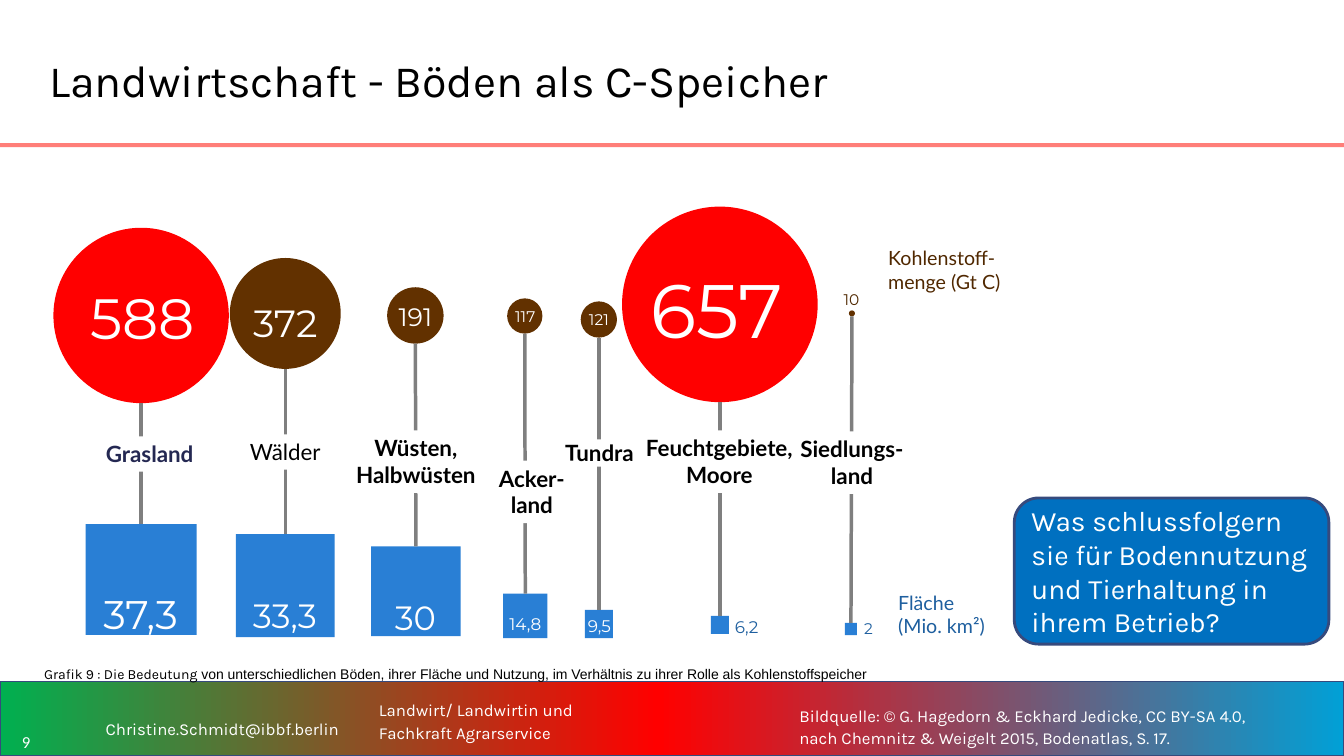
from copy import deepcopy
from dataclasses import dataclass
from typing import NamedTuple

from pptx import Presentation
from pptx.dml.color import RGBColor
from pptx.enum.shapes import MSO_CONNECTOR, MSO_SHAPE as Preset
from pptx.enum.text import MSO_ANCHOR as Anchor, PP_ALIGN as Align
from pptx.oxml.ns import qn
from pptx.oxml.xmlchemy import OxmlElement
from pptx.util import Emu, Pt

EMU_PER_PX = 9144
COLORS = {
    "white": "FFFFFF", "black": "000000", "red": "FF0000", "brown": "623100",
    "dark brown": "502800", "blue": "297FD5", "dark blue": "1E5F9F",
    "navy": "242852", "gray": "7F7F7F", "rose": "FF7E79", "outline": "364A7D",
    "callout": "0070C0", "green": "00B050", "cyan": "01A0D6",
}
FOOTER_STOPS = [(0, "green"), (0.49, "red"), (1, "cyan")]
PLAIN = (10, 5, 10, 5)
VALUE = (10, 5, 10, 0)


class Box(NamedTuple):
    left: int
    top: int
    width: int
    height: int


class Value(NamedTuple):
    text: str
    box: Box
    size: float
    color: str = "white"


@dataclass
class Soil:
    lines: list[str]
    label: Box
    circle: Box
    square: Box
    carbon: Value
    area: Value
    circle_color: str = "brown"
    label_color: str = "black"
    bold: bool = True
    insets: tuple = (0, 4, 0, 4)


SOILS = [
    Soil(["Grasland"], Box(86, 433, 125, 35), Box(53, 226, 174, 174), Box(85, 520, 110, 110),
         Value("588", Box(78, 276, 127, 78), 40.5), Value("37,3", Box(89, 580, 101, 53), 28.5),
         circle_color="red", label_color="navy"),
    Soil(["Wälder"], Box(236, 431, 94, 35), Box(228, 256, 110, 110), Box(234, 530, 98, 102),
         Value("372", Box(239, 292, 88, 56), 27), Value("33,3", Box(238, 585, 89, 45), 24),
         bold=False),
    Soil(["Wüsten,", "Halbwüsten"], Box(350, 427, 125, 62), Box(384, 285, 56, 56),
         Box(368, 542, 89, 89),
         Value("191", Box(384, 294, 56, 40), 18), Value("30", Box(380, 587, 64, 45), 24)),
    Soil(["Tundra"], Box(559, 436, 71, 27), Box(576, 299, 36, 36), Box(580, 605, 28, 28),
         Value("121", Box(573, 303, 42, 29), 11), Value("9,5", Box(572, 606, 45, 25), 12),
         insets=(0, 0, 0, 0)),
    Soil(["Acker-land"], Box(484, 457, 87, 62), Box(503, 296, 35, 35), Box(499, 589, 44, 44),
         Value("117", Box(500, 300, 42, 29), 11), Value("14,8", Box(495, 604, 52, 25), 12)),
    Soil(["Feuchtgebiete,", "Moore"], Box(637, 427, 153, 62), Box(617, 205, 194, 194),
         Box(705, 611, 18, 18),
         Value("657", Box(631, 256, 160, 101), 54),
         Value("6,2", Box(718, 607, 45, 25), 12, "dark blue"), circle_color="red"),
    Soil(["Siedlungs-", "land"], Box(789, 428, 112, 62), Box(842, 308, 6, 6),
         Box(838, 618, 12, 12),
         Value("10", Box(826, 283, 37, 29), 11, "dark brown"),
         Value("2", Box(847, 609, 29, 24), 11, "dark blue"), insets=(4, 4, 4, 4)),
]


def px(count: int) -> Emu:
    return Emu(count * EMU_PER_PX)


def rgb(name: str) -> RGBColor:
    return RGBColor.from_string(COLORS[name])


def add_form(page, preset, box: Box, fill: str, line: str | None = None, weight: float = 1):
    shape = page.shapes.add_shape(preset, *map(px, box))
    shape.shadow.inherit = False
    shape.fill.solid()
    shape.fill.fore_color.rgb = rgb(fill)
    if line:
        shape.line.color.rgb = rgb(line)
        shape.line.width = Pt(weight)
    else:
        shape.line.fill.background()
    return shape


def add_span(para, text: str, font: str, size: float, color: str, bold: bool = False) -> None:
    span = para.add_run()
    span.text = text
    span.font.name = font
    span.font.size = Pt(size)
    span.font.bold = bold
    span.font.color.rgb = rgb(color)


def write(shape, lines: list[str], *, font: str, size: float, color: str, bold: bool = False,
          align=Align.LEFT, anchor=Anchor.TOP, insets: tuple = PLAIN, wrap: bool = True,
          spacing: float = 1.0, margin: int = 0, indent: int = 0):
    frame = shape.text_frame
    frame.word_wrap = wrap
    frame.vertical_anchor = anchor
    frame.margin_left, frame.margin_top, frame.margin_right, frame.margin_bottom = map(px, insets)
    for index, text in enumerate(lines):
        para = frame.add_paragraph() if index else frame.paragraphs[0]
        para.alignment = align
        para.line_spacing = spacing
        if margin:
            properties = para._p.get_or_add_pPr()
            properties.set("marL", str(px(margin)))
            properties.set("indent", str(px(indent)))
        add_span(para, text, font, size, color, bold)
    return para


def add_text(page, box: Box, lines: list[str], **style):
    return write(page.shapes.add_textbox(*map(px, box)), lines, **style)


def add_stem(page, circle: Box, square) -> None:
    center, bottom = px(circle.left) + px(circle.width) // 2, px(circle.top + circle.height)
    stem = page.shapes.add_connector(MSO_CONNECTOR.STRAIGHT, center, bottom, center, square.top)
    stem.end_connect(square, 0)
    stem.line.color.rgb = rgb("gray")
    stem.line.width = Pt(2.5)
    stem._element.spPr.append(OxmlElement("a:effectLst"))


def add_soil(page, soil: Soil) -> None:
    add_form(page, Preset.OVAL, soil.circle, soil.circle_color)
    square = add_form(page, Preset.RECTANGLE, soil.square, "blue")
    add_stem(page, soil.circle, square)
    label = add_form(page, Preset.RECTANGLE, soil.label, "white")
    write(label, soil.lines, font="Lato", size=16, color=soil.label_color, bold=soil.bold,
          align=Align.CENTER, insets=soil.insets)
    for value, insets in ((soil.carbon, PLAIN), (soil.area, VALUE)):
        add_text(page, value.box, [value.text], font="Montserrat", size=value.size,
                 color=value.color, align=Align.CENTER, insets=insets, wrap=False)


def add_footer_band(page) -> None:
    band = add_form(page, Preset.RECTANGLE, Box(0, 676, 1333, 74), "red", "outline")
    band.fill.gradient()
    band.fill.gradient_angle = 0
    stop_list = band._element.spPr.find(qn("a:gradFill")).find(qn("a:gsLst"))
    stop_list.append(deepcopy(stop_list[0]))
    for stop, (position, color) in zip(band.fill.gradient_stops, FOOTER_STOPS):
        stop.position = position
        stop.color.rgb = rgb(color)


def main() -> None:
    deck = Presentation()
    deck.slide_width, deck.slide_height = px(1333), px(750)
    page = deck.slides.add_slide(deck.slide_layouts[6])

    add_footer_band(page)
    add_form(page, Preset.RECTANGLE, Box(0, 142, 1333, 4), "rose")
    add_text(page, Box(39, 20, 984, 118), ["Landwirtschaft - Böden als C-Speicher"],
             font="Karla", size=32, color="black", anchor=Anchor.MIDDLE)

    for soil in SOILS:
        add_soil(page, soil)
    add_text(page, Box(881, 244, 124, 47), ["Kohlenstoff-", "menge (Gt C)"],
             font="Lato", size=14, color="dark brown", insets=(0, 0, 0, 0))
    add_text(page, Box(881, 581, 109, 57), ["Fläche", "(Mio. km²)"],
             font="Lato", size=14, color="dark blue")

    callout = add_form(page, Preset.ROUNDED_RECTANGLE, Box(1006, 494, 312, 145),
                       "callout", "outline", 2)
    write(callout, ["Was schlussfolgern sie für Bodennutzung und Tierhaltung in ihrem Betrieb?"],
          font="Karla", size=20, color="white", anchor=Anchor.MIDDLE)

    caption = add_text(page, Box(34, 655, 907, 27), ["Grafik 9 : Die Bedeutung"],
                       font="Karla", size=10, color="black")
    add_span(caption, " von unterschiedlichen Böden, ihrer Fläche und Nutzung, im Verhältnis "
             "zu ihrer Rolle als Kohlenstoffspeicher", "Arial", 10, "black")

    add_text(page, Box(0, 722, 52, 27), ["9"], font="Calibri", size=12, color="white",
             align=Align.CENTER, anchor=Anchor.MIDDLE, insets=(0, 5, 0, 5))
    add_text(page, Box(89, 706, 311, 38), ["Christine.Schmidt@ibbf.berlin"], font="Karla",
             size=12, color="white", insets=(10, 10, 10, 10), spacing=0.9, margin=6)
    add_text(page, Box(366, 684, 419, 61), ["Landwirt/ Landwirtin und", "Fachkraft Agrarservice"],
             font="Karla", size=12, color="white", anchor=Anchor.MIDDLE, spacing=1.1,
             margin=4, indent=-4)
    add_text(page, Box(783, 693, 491, 44),
             ["Bildquelle: © G. Hagedorn & Eckhard Jedicke, CC BY-SA 4.0, "
              "nach Chemnitz & Weigelt 2015, Bodenatlas, S. 17."],
             font="Karla", size=12, color="white", spacing=1.1)

    deck.save("out.pptx")


if __name__ == "__main__":
    main()
